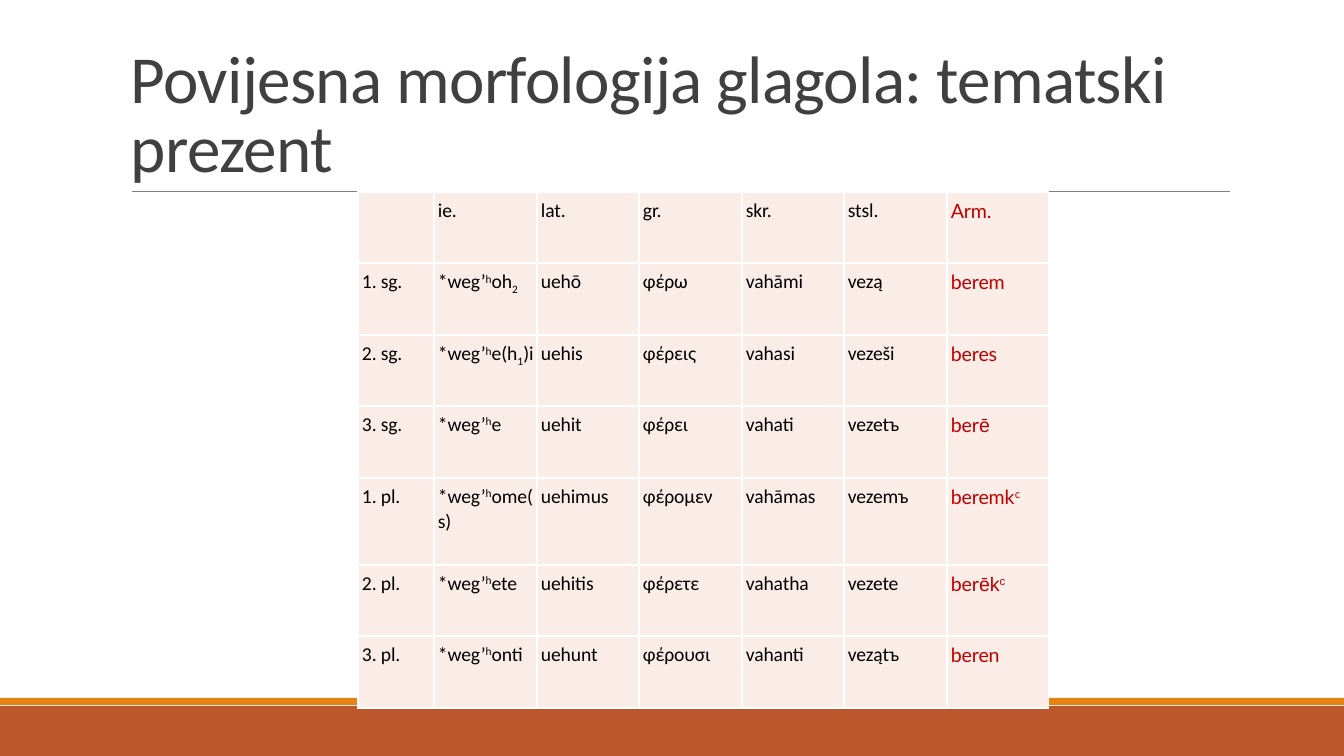
from lxml.etree import SubElement
from pptx import Presentation
from pptx.dml.color import RGBColor
from pptx.enum.shapes import MSO_CONNECTOR, MSO_SHAPE
from pptx.enum.text import MSO_ANCHOR
from pptx.oxml.ns import qn
from pptx.util import Pt

PX = 914400 / 100.8
COLORS = {
    "band": "BD582C", "stripe": "E48312", "rule": "808080", "title": "404040",
    "cell": "FAEDE7", "border": "FFFFFF", "text": "000000", "armenian": "C00000",
}
# "|" parts the runs: ^ superscript, _ subscript, ~ switches to Arial
BASELINES = {"^": "30000", "_": "-25000"}
VERB_FORMS = [
    ["", "ie.", "lat.", "gr.", "skr.", "stsl.", "Arm."],
    ["1. sg.", "*weg’|^h|oh|_2", "uehō", "φέρω", "vahāmi", "vezą", "berem"],
    ["2. sg.", "*weg’|^h|e(h|_1|)i", "uehis", "φέρεις", "vahasi", "vezeši", "beres"],
    ["3. sg.", "*weg’|^h|e", "uehit", "φέρει", "vahati", "vezetъ", "ber|~ē"],
    ["1. pl.", "*weg’|^h|ome(s)", "uehimus", "φέρομεν", "vahāmas", "vezemъ", "beremk|^c"],
    ["2. pl.", "*weg’|^h|ete", "uehitis", "φέρετε", "vahatha", "vezete", "ber|~ēk|^c"],
    ["3. pl.", "*weg’|^h|onti", "uehunt", "φέρουσι", "vahanti", "vezątъ", "beren"],
]
COLUMN_WIDTHS = [76] + [103, 102] * 3
ROW_HEIGHTS = [71, 72, 71, 72, 87, 71, 72]


def px(*lengths):
    """Turn pixel lengths into EMU."""
    return [round(length * PX) for length in lengths]


def format_run(run, font_name, size, color, spacing):
    run.font.name = font_name
    run.font.size = Pt(size)
    run.font.color.rgb = RGBColor.from_string(COLORS[color])
    run.font._element.set("spc", str(spacing))


presentation = Presentation()
presentation.slide_width, presentation.slide_height = px(1344, 756)
slide = presentation.slides.add_slide(presentation.slide_layouts[6])

for color, top, height in [("band", 706, 50), ("stripe", 698, 7)]:
    shape = slide.shapes.add_shape(MSO_SHAPE.RECTANGLE, *px(0, top, 1344, height))
    shape.shadow.inherit = False
    shape.fill.solid()
    shape.fill.fore_color.rgb = RGBColor.from_string(COLORS[color])
    shape.line.fill.background()

rule = slide.shapes.add_connector(MSO_CONNECTOR.STRAIGHT, *px(132, 191, 1230, 191))
rule.line.color.rgb = RGBColor.from_string(COLORS["rule"])
rule.line.width = Pt(0.5)
SubElement(rule._element.spPr, qn("a:effectLst"))

title = slide.shapes.add_textbox(*px(121, 31, 1109, 160))
title.text_frame.word_wrap = True
title.text_frame.vertical_anchor = MSO_ANCHOR.BOTTOM
title.text_frame.text = "Povijesna morfologija glagola: tematski prezent"
paragraph = title.text_frame.paragraphs[0]
paragraph.line_spacing = 0.85
format_run(paragraph.runs[0], "Calibri", 48, "title", -50)

table = slide.shapes.add_table(
    len(ROW_HEIGHTS), len(COLUMN_WIDTHS),
    *px(358, 192, sum(COLUMN_WIDTHS), sum(ROW_HEIGHTS))).table
for column, width in zip(table.columns, px(*COLUMN_WIDTHS)):
    column.width = width
for row, height in zip(table.rows, px(*ROW_HEIGHTS)):
    row.height = height

for row_index, forms in enumerate(VERB_FORMS):
    for column_index, form in enumerate(forms):
        cell = table.cell(row_index, column_index)
        cell.margin_left, cell.margin_top, cell.margin_right, cell.margin_bottom = px(4, 6, 0, 6)
        properties = cell._tc.get_or_add_tcPr()
        for side in ("lnL", "lnR", "lnT", "lnB"):
            border = SubElement(properties, qn(f"a:{side}"), w=str(Pt(1)))
            fill = SubElement(border, qn("a:solidFill"))
            SubElement(fill, qn("a:srgbClr"), val=COLORS["border"])
        cell.fill.solid()
        cell.fill.fore_color.rgb = RGBColor.from_string(COLORS["cell"])

        paragraph = cell.text_frame.paragraphs[0]
        paragraph.line_spacing = 1.05
        is_armenian = column_index == len(forms) - 1
        font_name, color = ("Lato", "armenian") if is_armenian else ("Calibri", "text")
        for part in form.split("|") if form else []:
            if part.startswith("~"):
                font_name = "Arial"
            run = paragraph.add_run()
            run.text = part.lstrip("^_~")
            format_run(run, font_name, 14, color, -10)
            if part[0] in BASELINES:
                run.font._element.set("baseline", BASELINES[part[0]])

presentation.save("out.pptx")
